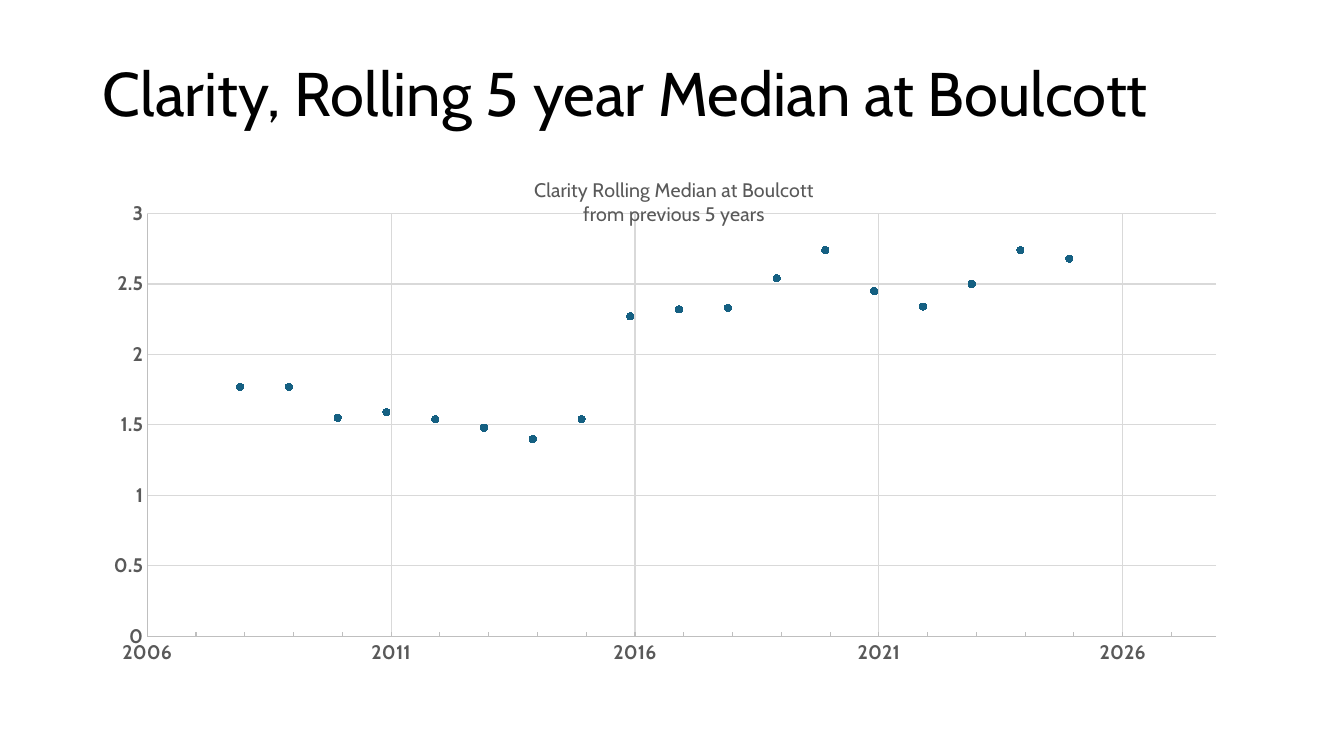
from dataclasses import dataclass

from lxml.etree import SubElement
from pptx import Presentation
from pptx.chart.data import XyChartData
from pptx.dml.color import RGBColor
from pptx.enum.chart import XL_CHART_TYPE, XL_MARKER_STYLE, XL_TICK_MARK
from pptx.enum.text import MSO_ANCHOR, PP_ALIGN
from pptx.oxml.ns import qn
from pptx.util import Inches, Pt


@dataclass(frozen=True)
class Theme:
    font: str = "Cabin"
    ink: str = "000000"
    label: str = "595959"
    axis: str = "BFBFBF"
    grid: str = "D9D9D9"
    point: str = "156082"
    title_size: int = 44
    chart_size: int = 14
    hairline: float = 0.75
    point_size: int = 5


THEME = Theme()
WIDTH, HEIGHT = Inches(13.33), Inches(7.5)
FIRST_DAY, YEAR = 39695, 365
MEDIANS = [1.77, 1.77, 1.55, 1.59, 1.54, 1.48, 1.4, 1.54, 2.27,
           2.32, 2.33, 2.54, 2.74, 2.45, 2.34, 2.5, 2.74, 2.68]


def style_font(font, size, color, bold=False):
    font.name = THEME.font
    font.size = Pt(size)
    font.bold = bold
    font.color.rgb = RGBColor.from_string(color)


def write(frame, text, align=PP_ALIGN.LEFT, spacing=1.0, **font_format):
    frame.text = text
    for paragraph in frame.paragraphs:
        paragraph.alignment = align
        paragraph.line_spacing = spacing
        for run in paragraph.runs:
            style_font(run.font, **font_format)


def style_line(line, color):
    line.color.rgb = RGBColor.from_string(color)
    line.width = Pt(THEME.hairline)


def set_layout(parent, position, **shares):
    for previous in parent.findall(qn("c:layout")):
        parent.remove(previous)
    layout = SubElement(parent, qn("c:layout"))
    manual = SubElement(layout, qn("c:manualLayout"))
    if "w" in shares:
        SubElement(manual, qn("c:layoutTarget"), val="inner")
    for side in ("x", "y"):
        SubElement(manual, qn(f"c:{side}Mode"), val="edge")
    for side, share in shares.items():
        SubElement(manual, qn(f"c:{side}"), val=str(share))
    parent.insert(position, layout)


def style_axis(axis, low, high, step, number_format):
    axis.minimum_scale, axis.maximum_scale, axis.major_unit = low, high, step
    axis.major_tick_mark = axis.minor_tick_mark = XL_TICK_MARK.NONE
    axis.has_major_gridlines = True
    style_line(axis.major_gridlines.format.line, THEME.grid)
    style_line(axis.format.line, THEME.axis)
    axis.tick_labels.number_format = number_format
    axis.tick_labels.number_format_is_linked = False
    style_font(axis.tick_labels.font, THEME.chart_size, THEME.label, bold=True)


def add_heading(slide, left, top, width, height):
    heading = slide.shapes.title
    heading.left, heading.top = left, top
    heading.width, heading.height = width, height
    heading.text_frame.vertical_anchor = MSO_ANCHOR.MIDDLE
    write(heading.text_frame, "Clarity, Rolling 5 year Median at Boulcott",
          spacing=0.9, size=THEME.title_size, color=THEME.ink)


def add_clarity_chart(slide, left, top, width, height):
    data = XyChartData()
    clarity = data.add_series("Series 1")
    for year, median in enumerate(MEDIANS):
        clarity.add_data_point(FIRST_DAY + YEAR * year, median)
    chart = slide.shapes.add_chart(
        XL_CHART_TYPE.XY_SCATTER, left, top, width, height, data).chart
    chart.has_legend = False
    style_font(chart.font, 10, THEME.ink)

    chart.has_title = True
    write(chart.chart_title.text_frame,
          "Clarity Rolling Median at Boulcott\nfrom previous 5 years",
          align=PP_ALIGN.CENTER, size=THEME.chart_size, color=THEME.label)
    set_layout(chart.chart_title._element, 1, x=0.378, y=0.04)
    plot_area = chart._chartSpace.chart.plotArea
    set_layout(plot_area, 0, x=0.047, y=0.116, w=0.922, h=0.799)

    dates = chart.category_axis
    style_axis(dates, 39000, 47000, 5 * YEAR, "yyyy")
    dates.minor_unit = YEAR
    dates.minor_tick_mark = XL_TICK_MARK.INSIDE
    style_axis(chart.value_axis, 0, 3, 0.5, "General")

    chart.plots[0].vary_by_categories = False
    medians = chart.plots[0].series[0]
    medians.format.line.fill.background()
    medians.marker.style = XL_MARKER_STYLE.CIRCLE
    medians.marker.size = THEME.point_size
    point_color = RGBColor.from_string(THEME.point)
    medians.marker.format.fill.solid()
    medians.marker.format.fill.fore_color.rgb = point_color
    style_line(medians.marker.format.line, THEME.point)


def main():
    deck = Presentation()
    deck.slide_width, deck.slide_height = WIDTH, HEIGHT
    slide = deck.slides.add_slide(deck.slide_layouts[5])
    left, width = Inches(0.92), Inches(11.5)
    add_heading(slide, left, Inches(0.4), width, Inches(1.11))
    add_clarity_chart(slide, left, Inches(1.51), width, Inches(5.25))
    deck.save("out.pptx")


if __name__ == "__main__":
    main()
